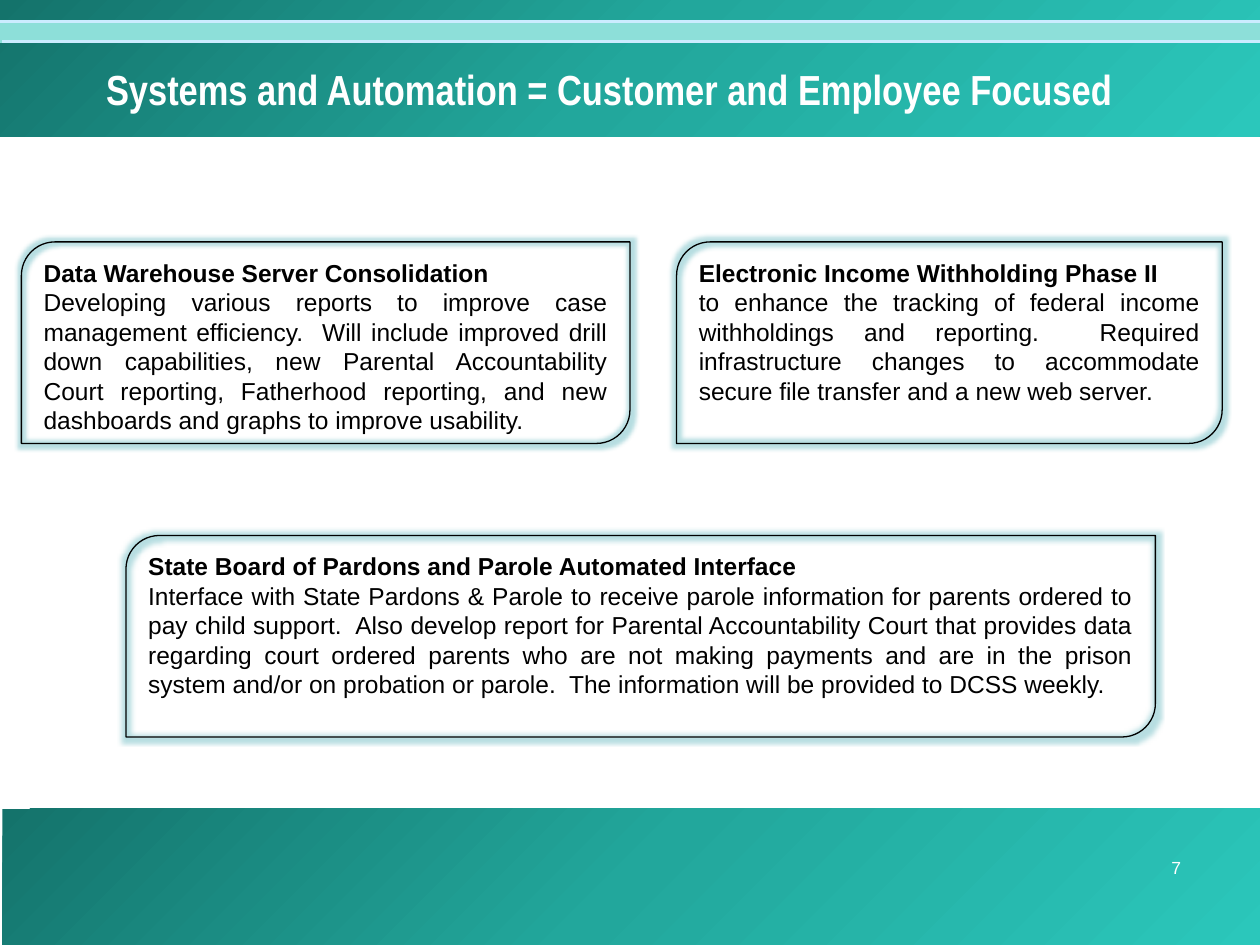
"""Build the systems and automation slide with three glowing project cards."""
from copy import deepcopy
from dataclasses import dataclass

from lxml import etree
from pptx import Presentation
from pptx.dml.color import RGBColor
from pptx.enum.shapes import MSO_CONNECTOR, MSO_SHAPE
from pptx.enum.text import MSO_ANCHOR, MSO_AUTO_SIZE, PP_ALIGN
from pptx.oxml import parse_xml
from pptx.oxml.ns import nsdecls, qn
from pptx.util import Inches, Pt

RECTANGLE = MSO_SHAPE.RECTANGLE
CARD_SHAPE = MSO_SHAPE.ROUND_2_DIAG_RECTANGLE
STRAIGHT = MSO_CONNECTOR.STRAIGHT
TOP, MIDDLE = MSO_ANCHOR.TOP, MSO_ANCHOR.MIDDLE
CENTER, JUSTIFY = PP_ALIGN.CENTER, PP_ALIGN.JUSTIFY
GROW = MSO_AUTO_SIZE.SHAPE_TO_FIT_TEXT
NO_FIT = MSO_AUTO_SIZE.NONE

WHITE, BLACK = "FFFFFF", "000000"
STRIPE, STRIPE_EDGE, GLOW = "8DDFD9", "CCECFF", "4BACB5"
TEAL_STOPS = ((0, "14736B"), (0.5, "22A79C"), (1, "2BC7BB"))
CARD_HEIGHT = 1.6


@dataclass
class Card:
    left: float
    top: float
    width: float
    heading: str
    detail: str


CARDS = (
    Card(0.17, 1.92, 4.83, "Data Warehouse Server Consolidation",
         "Developing various reports to improve case management efficiency.  "
         "Will include improved drill down capabilities, new Parental "
         "Accountability Court reporting, Fatherhood reporting, and new "
         "dashboards and graphs to improve usability."),
    Card(5.37, 1.92, 4.33, "Electronic Income Withholding Phase II",
         "to enhance the tracking of federal income withholdings and "
         "reporting.  Required infrastructure changes to accommodate secure "
         "file transfer and a new web server."),
    Card(1, 4.25, 8.17, "State Board of Pardons and Parole Automated Interface",
         "Interface with State Pardons & Parole to receive parole information "
         "for parents ordered to pay child support.  Also develop report for "
         "Parental Accountability Court that provides data regarding court "
         "ordered parents who are not making payments and are in the prison "
         "system and/or on probation or parole.  The information will be "
         "provided to DCSS weekly."),
)


def color(value: str) -> RGBColor:
    """Turn a hex string into a colour."""
    return RGBColor.from_string(value)


def write(paragraph, text: str, *, size: float, ink: str, font: str = "Arial",
          bold: bool = False, align=CENTER) -> None:
    """Add one formatted span to a paragraph."""
    paragraph.alignment = align
    span = paragraph.add_run()
    span.text = text
    span.font.name = font
    span.font.size = Pt(size)
    span.font.bold = bold
    span.font.color.rgb = color(ink)


def set_frame(box, anchor, fit):
    """Wrap and anchor the text of a box and return its frame."""
    frame = box.text_frame
    frame.word_wrap = True
    frame.auto_size = fit
    frame.vertical_anchor = anchor
    return frame


def add_band(page, left: float, top: float, height: float):
    """Add a borderless band, 10 inches wide."""
    band = page.shapes.add_shape(RECTANGLE, Inches(left), Inches(top),
                                 Inches(10), Inches(height))
    band.shadow.inherit = False
    band.line.fill.background()
    return band


def fill_teal(band) -> None:
    """Fill a band with the diagonal three-stop gradient."""
    band.fill.gradient()
    band.fill.gradient_angle = 315
    first = band.fill.gradient_stops
    stop_list = band.element.spPr.find(".//" + qn("a:gsLst"))
    stop_list.insert(1, deepcopy(stop_list[0]))
    first = band.fill.gradient_stops
    for stop, (position, value) in zip(first, TEAL_STOPS):
        stop.position = position
        stop.color.rgb = color(value)


def add_edge(page, left: float, top: float) -> None:
    """Draw one stripe edge to the right side of the page."""
    edge = page.shapes.add_connector(STRAIGHT, Inches(left), Inches(top),
                                     Inches(10), Inches(top))
    edge.line.color.rgb = color(STRIPE_EDGE)
    edge.line.width = Pt(1.5)
    etree.SubElement(edge.element.spPr, qn("a:effectLst"))


def add_card(page, card: Card) -> None:
    """Draw one outlined card with a soft glow."""
    box = page.shapes.add_shape(CARD_SHAPE, Inches(card.left), Inches(card.top),
                                Inches(card.width), Inches(CARD_HEIGHT))
    box.fill.background()
    box.line.color.rgb = color(BLACK)
    box.line.width = Pt(0.75)
    box.element.spPr.append(parse_xml(
        f'<a:effectLst {nsdecls("a")}><a:glow rad="63500">'
        f'<a:srgbClr val="{GLOW}"><a:alpha val="40000"/></a:srgbClr>'
        '</a:glow></a:effectLst>'))
    frame = set_frame(box, TOP, GROW)
    write(frame.paragraphs[0], card.heading, size=14, ink=BLACK, bold=True,
          align=JUSTIFY)
    write(frame.add_paragraph(), card.detail, size=14, ink=BLACK, align=JUSTIFY)


def add_title(page, text: str) -> None:
    """Place the title placeholder in front of the header band."""
    title = page.shapes.title
    title.left, title.top = Inches(0.5), Inches(0.08)
    title.width, title.height = Inches(8.67), Inches(1.25)
    title.element.getparent().append(title.element)
    frame = set_frame(title, MIDDLE, NO_FIT)
    write(frame.paragraphs[0], text, size=24, ink=WHITE, font="Arial Narrow",
          bold=True)


def add_page_number(page, number: str) -> None:
    """Write the page number on the footer band."""
    box = page.shapes.add_textbox(Inches(9), Inches(6.75), Inches(0.67),
                                  Inches(0.42))
    frame = set_frame(box, TOP, NO_FIT)
    write(frame.paragraphs[0], number, size=10, ink=WHITE)


def main() -> None:
    """Build and save the deck."""
    deck = Presentation()
    deck.slide_width, deck.slide_height = Inches(10), Inches(7.5)
    page = deck.slides.add_slide(deck.slide_layouts[5])
    for left, top in ((0.02, 6.42), (0, 0)):
        fill_teal(add_band(page, left, top, 1.08))
    stripe = add_band(page, 0, 0.17, 0.17)
    stripe.fill.solid()
    stripe.fill.fore_color.rgb = color(STRIPE)
    for left, top in ((0, 0.17), (0.02, 0.33)):
        add_edge(page, left, top)
    add_title(page, "Systems and Automation = Customer and Employee Focused")
    add_page_number(page, "7")
    for card in CARDS:
        add_card(page, card)
    deck.save("out.pptx")


if __name__ == "__main__":
    main()
